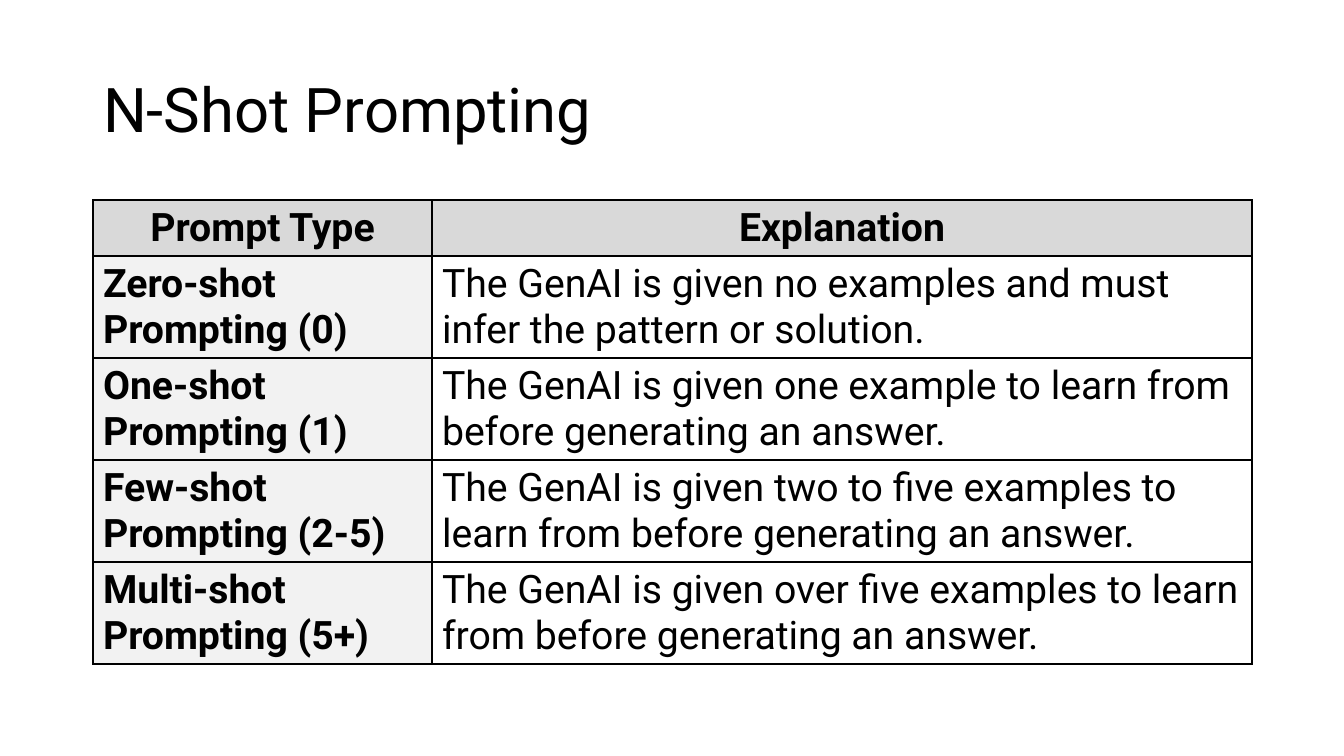
from lxml import etree
from pptx import Presentation
from pptx.dml.color import RGBColor
from pptx.enum.text import MSO_ANCHOR as ANCHOR, MSO_AUTO_SIZE as AUTO, PP_ALIGN as ALIGN
from pptx.oxml import parse_xml
from pptx.oxml.ns import nsdecls
from pptx.util import Pt

PX = 914400 / 100.8  # EMU in one px
BLACK = RGBColor(0x00, 0x00, 0x00)
HEADER_GREY = RGBColor(0xD9, 0xD9, 0xD9)
LABEL_GREY = RGBColor(0xF2, 0xF2, 0xF2)
FONT = "Roboto"

COL_WIDTHS = [339, 820]
HEADER_H, ROW_H = 56, 102
ROWS = [
    ("Prompt Type", "Explanation"),
    ("Zero-shot Prompting (0)",
     "The GenAI is given no examples and must infer the pattern or solution."),
    ("One-shot Prompting (1)",
     "The GenAI is given one example to learn from before generating an answer."),
    ("Few-shot Prompting (2-5)",
     "The GenAI is given two to five examples to learn from before generating an answer."),
    ("Multi-shot Prompting (5+)",
     "The GenAI is given over five examples to learn from before generating an answer."),
]


def px(n):
    return round(n * PX)


def add_borders(cell):
    tc_pr = cell._tc.get_or_add_tcPr()
    for i, side in enumerate(("lnL", "lnR", "lnT", "lnB")):
        tc_pr.insert(i, parse_xml(
            f'<a:{side} {nsdecls("a")} w="{Pt(1)}"><a:solidFill>'
            f'<a:srgbClr val="{BLACK}"/></a:solidFill></a:{side}>'))


prs = Presentation()
prs.slide_width, prs.slide_height = px(1344), px(756)
s = prs.slides.add_slide(prs.slide_layouts[5])

# Title
title = s.shapes.title
title.left, title.top, title.width, title.height = px(93), px(40), px(1159), px(146)
tf = title.text_frame
tf.text = "N-Shot Prompting"
tf.auto_size = AUTO.NONE
tf.vertical_anchor = ANCHOR.MIDDLE
p = tf.paragraphs[0]
p.alignment = ALIGN.LEFT
p.line_spacing = 0.9
p.font.name, p.font.size, p.font.color.rgb = FONT, Pt(44), BLACK

# Table grid
table = s.shapes.add_table(len(ROWS), len(COL_WIDTHS), px(93), px(200), px(sum(COL_WIDTHS)),
                           px(HEADER_H + 4 * ROW_H)).table
table.horz_banding = False
for col, width in zip(table.columns, COL_WIDTHS):
    col.width = px(width)

# Table cells
for r, texts in enumerate(ROWS):
    table.rows[r].height = px(ROW_H if r else HEADER_H)
    for c, text in enumerate(texts):
        cell = table.cell(r, c)
        cell.text = text
        cell.vertical_anchor = ANCHOR.MIDDLE
        if r and c:
            cell.fill.background()
        else:
            cell.fill.solid()
            cell.fill.fore_color.rgb = LABEL_GREY if r else HEADER_GREY
        add_borders(cell)
        p = cell.text_frame.paragraphs[0]
        p.alignment = ALIGN.LEFT if r else ALIGN.CENTER
        p.font.name, p.font.size, p.font.color.rgb = FONT, Pt(28), BLACK
        p.font.bold = r == 0 or c == 0

prs.save("out.pptx")
